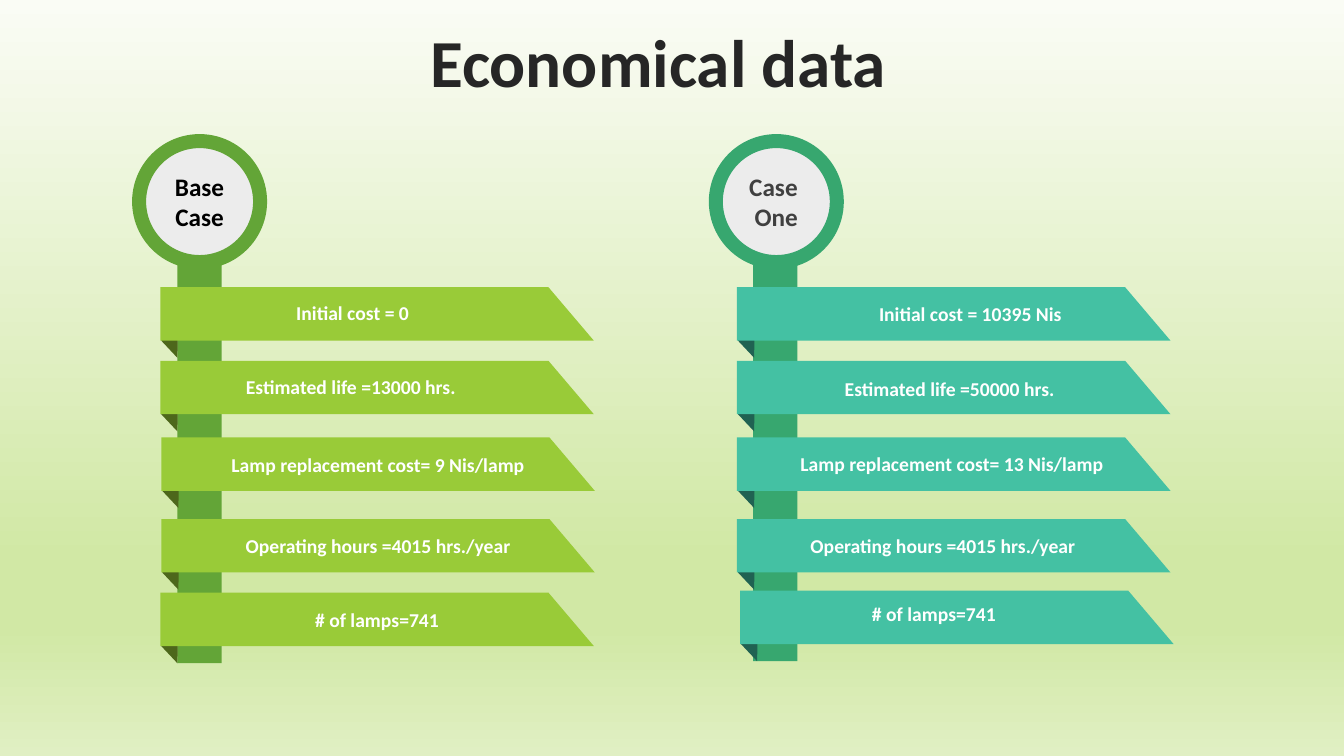
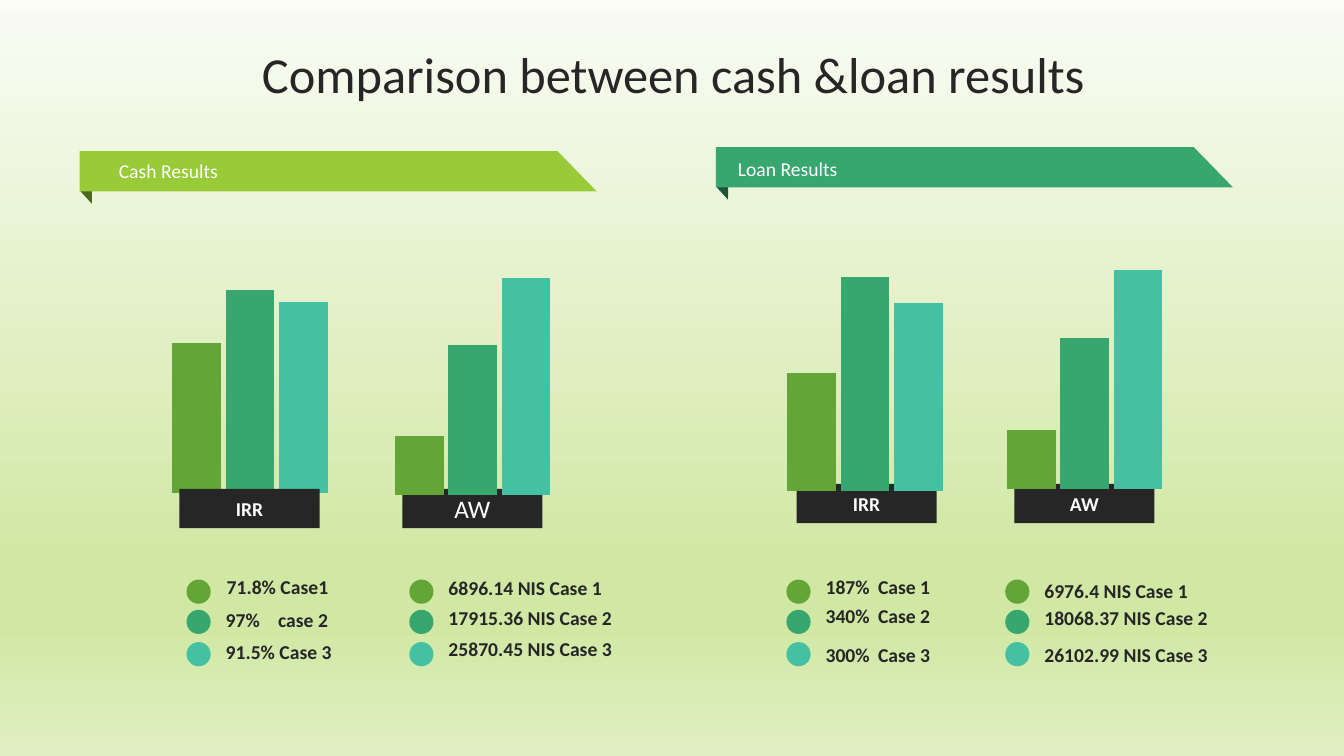
"""Two slides on lighting economics: case data and cash against loan results."""
from lxml.etree import SubElement
from pptx import Presentation
from pptx.chart.data import CategoryChartData
from pptx.dml.color import RGBColor
from pptx.enum.chart import XL_CHART_TYPE as CT
from pptx.enum.shapes import MSO_SHAPE as MS
from pptx.enum.text import MSO_ANCHOR as MA, PP_ALIGN as PA
from pptx.oxml.ns import qn
from pptx.util import Pt

PX = 9144
FONT = "Calibri"
GREEN, JADE, TEAL, LIME = "63A537", "37A76F", "44C1A3", "99CB38"
OLIVE, PINE, FOREST = "4D671B", "206252", "1C5438"
DARK, WHITE, PALE = "262626", "FFFFFF", "ECECEC"
BACKDROP = [(0, "FAFCF5"), (74, "D1E8A5"), (83, "D1E8A5"), (100, "E0EFC3")]

CASES = [
    dict(name=("Base", "Case"), ink="000000", left=138, pole=(176, 400),
         main=GREEN, ribbon=LIME, fold=OLIVE, rows=[
             (159, 285, "Initial cost = 0", (284, 293)),
             (159, 358, "Estimated life =13000 hrs.", (234, 367)),
             (160, 434, "Lamp replacement cost= 9 Nis/lamp", None),
             (160, 515, "Operating hours =4015 hrs./year", None),
             (159, 588, "# of lamps=741", None)]),
    dict(name=("Case ", "One"), ink="404040", left=710, pole=(747, 398),
         main=JADE, ribbon=TEAL, fold=PINE, rows=[
             (731, 285, "Initial cost = 10395 Nis", (862, 294)),
             (731, 358, "Estimated life =50000 hrs.", (828, 369)),
             (731, 434, "Lamp replacement cost= 13 Nis/lamp", (784, 443)),
             (731, 515, "Operating hours =4015 hrs./year", (794, 524)),
             (734, 586, "# of lamps=741", (855, 592))]),
]
BANNERS = [("Cash Results", 79, 150, LIME, OLIVE, (108, 152)),
           ("Loan Results", 710, 146, JADE, FOREST, (722, 150))]
SERIES = [("Case 1", GREEN, 575), ("Case 2", JADE, 605), ("Case 3", TEAL, 637)]
RESULTS = [
    dict(name="IRR", size=14, bold=True, chart=(130, 234), base=(178, 485),
         values=(74, 100, 94), top=124, dots=185, labels=[
             (215, 565, "71.8% Case1"), (214, 598, "97%\tcase 2"),
             (214, 629, "91.5% Case 3")]),
    dict(name="AW", size=18, bold=False, chart=(351, 236), base=(399, 485),
         values=(27, 69, 100), top=116, dots=406, labels=[
             (435, 566, "6896.14 NIS Case 1"), (435, 596, "17915.36 NIS Case 2"),
             (435, 627, "25870.45 NIS Case 3")]),
    dict(name="IRR", size=14, bold=True, chart=(740, 232), base=(790, 480),
         values=(55, 100, 88), top=118, dots=780, labels=[
             (809, 565, "187%\tCase 1"), (809, 594, "340%\tCase 2"),
             (809, 632, "300%\tCase 3")]),
    dict(name="AW", size=14, bold=True, chart=(958, 230), base=(1006, 480),
         values=(27, 69, 100), top=115, dots=997, labels=[
             (1026, 569, "6976.4 NIS Case 1"), (1026, 596, "18068.37 NIS Case 2"),
             (1026, 632, "26102.99 NIS Case 3")]),
]


def rgb(code):
    return RGBColor.from_string(code)


def px(*lengths):
    return [n * PX for n in lengths]


def write(sp, lines, size, color, bold=True, align=PA.CENTER):
    tf = sp.text_frame
    tf.word_wrap = True
    tf.vertical_anchor = MA.MIDDLE
    for i, line in enumerate(lines):
        p = tf.add_paragraph() if i else tf.paragraphs[0]
        p.alignment = align
        r = p.add_run()
        r.text = line
        r.font.name, r.font.size, r.font.bold = FONT, Pt(size), bold
        r.font.color.rgb = rgb(color)
        if "\t" in line:
            tabs = SubElement(p._p.get_or_add_pPr(), qn("a:tabLst"))
            SubElement(tabs, qn("a:tab"), pos=str(52 * PX), algn="l")
    return tf


def label(s, x, y, text, color=WHITE, bold=True):
    write(s.shapes.add_textbox(*px(x, y, 340, 34)), [text], 14, color, bold, PA.LEFT)


def paint(sp, color, line=None):
    sp.shadow.inherit = False
    sp.fill.solid()
    sp.fill.fore_color.rgb = rgb(color)
    if line:
        sp.line.color.rgb = rgb(line)
        sp.line.width = Pt(10)
    else:
        sp.line.fill.background()
    return sp


def shape(s, kind, box, color, line=None):
    return paint(s.shapes.add_shape(kind, *px(*box)), color, line)


def outline(s, points, color):
    fb = s.shapes.build_freeform(*points[0], scale=PX)
    fb.add_line_segments(points[1:], close=True)
    return paint(fb.convert_to_shape(), color)


def ribbon(s, x, y, w, h, slant, fold, color, shade):
    """Draw a slanted ribbon over its folded end."""
    fx, fy = x + 1, y + 2
    outline(s, [(fx + fold, fy), (fx, fy), (fx, y + h), (fx + fold - 1, y + h + fold)], shade)
    return outline(s, [(x, y), (x + w - slant, y), (x + w, y + h), (x, y + h)], color)


def add_slide(prs, title, box, size, bold):
    s = prs.slides.add_slide(prs.slide_layouts[6])
    p = write(s.shapes.add_textbox(*px(*box)), [title], size, DARK, bold).paragraphs[0]
    p.line_spacing, p.space_before = 0.9, Pt(10)
    return s


def set_backdrop(prs):
    master = prs.slide_master
    fill = master.background.fill
    fill.gradient()
    fill.gradient_angle = 270
    stops = next(master.element.iter(qn("a:gsLst")))
    for gs in list(stops):
        stops.remove(gs)
    for pos, color in BACKDROP:
        gs = SubElement(stops, qn("a:gs"), pos=str(pos * 1000))
        SubElement(gs, qn("a:srgbClr"), val=color)


def add_bars(s, res):
    data = CategoryChartData()
    data.categories = [res["name"]]
    for (name, _, _), value in zip(SERIES, res["values"]):
        data.add_series(name, [value])
    chart = s.shapes.add_chart(CT.COLUMN_CLUSTERED, *px(*res["chart"], 236, 260), data).chart
    chart.has_legend = chart.has_title = False
    chart.font.name, chart.font.size = FONT, Pt(18)
    chart.font.color.rgb = rgb("000000")
    axis = chart.value_axis
    axis.has_major_gridlines = False
    axis.minimum_scale, axis.maximum_scale = 0, res["top"]
    axis.visible = chart.category_axis.visible = False
    plot = chart.plots[0]
    plot.vary_by_categories = False
    plot.gap_width, plot.overlap = 150, -9
    for series, (_, color, _) in zip(plot.series, SERIES):
        series.format.fill.solid()
        series.format.fill.fore_color.rgb = rgb(color)
    space = chart.element
    frame = SubElement(space, qn("c:spPr"))
    SubElement(frame, qn("a:noFill"))
    SubElement(SubElement(frame, qn("a:ln")), qn("a:noFill"))
    space.find(qn("c:chart")).addnext(frame)


def add_base(s, res):
    sp = shape(s, MS.RECTANGLE, (*res["base"], 139, 39), DARK)
    write(sp, [res["name"]], res["size"], WHITE, res["bold"])


def economical_data(prs):
    s = add_slide(prs, "Economical data", (20, 26, 1266, 79), 48, True)
    for case in CASES:
        pole_x, pole_h = case["pole"]
        shape(s, MS.RECTANGLE, (pole_x, 258, 44, pole_h), case["main"])
        badge = shape(s, MS.OVAL, (case["left"], 140, 120, 120), PALE, case["main"])
        write(badge, case["name"], 18, case["ink"])
        for x, y, text, spot in case["rows"]:
            sp = ribbon(s, x, y, 430, 53, 45, 17, case["ribbon"], case["fold"])
            if spot:
                label(s, *spot, text)
            else:
                write(sp, [text], 14, WHITE)


def comparison(prs):
    s = add_slide(prs, "Comparison between cash &loan results", (35, 37, 1266, 79), 36, False)
    for text, x, y, color, shade, spot in BANNERS:
        ribbon(s, x, y, 513, 40, 39, 12, color, shade)
        label(s, *spot, text, bold=False)
    for i, res in enumerate(RESULTS):
        for draw in (add_base, add_bars) if i else (add_bars, add_base):
            draw(s, res)
        for _, color, y in SERIES:
            shape(s, MS.OVAL, (res["dots"], y, 24, 24), color)
        for x, y, text in res["labels"]:
            label(s, x, y, text, DARK)


def main():
    prs = Presentation()
    prs.slide_width, prs.slide_height = px(1333, 750)
    set_backdrop(prs)
    economical_data(prs)
    comparison(prs)
    prs.save("out.pptx")


if __name__ == "__main__":
    main()
